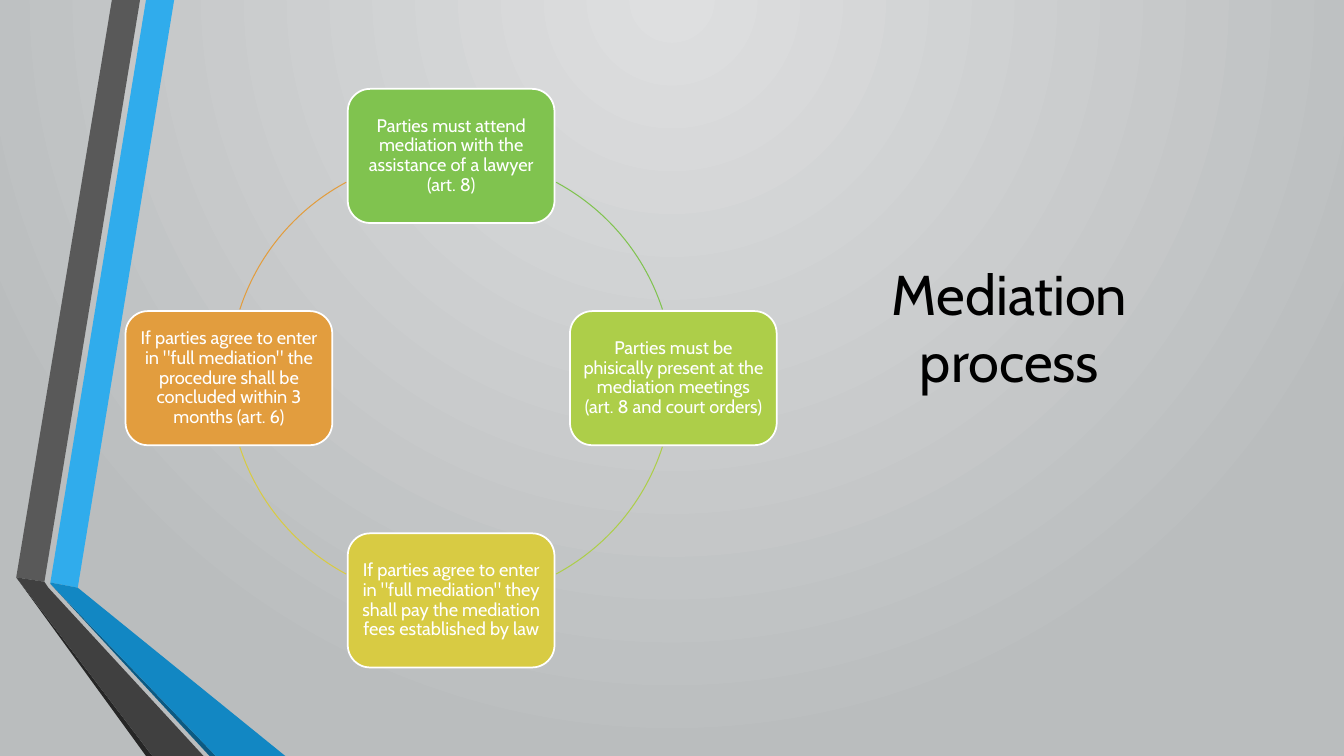
from math import cos, radians, sin

from lxml.etree import SubElement
from pptx import Presentation
from pptx.dml.color import RGBColor
from pptx.enum.shapes import MSO_SHAPE as SHAPE
from pptx.enum.text import MSO_ANCHOR as ANCHOR, MSO_AUTO_SIZE as AUTO, PP_ALIGN as ALIGN
from pptx.oxml.ns import qn
from pptx.util import Cm, Pt

FONT = "Cabin"
SLIDE_W, SLIDE_H = 33.87, 19.05
CENTRE_X, CENTRE_Y, RADIUS = 11.37, 9.53, 5.6
NODE_W, NODE_H = 5.21, 3.38
ARC_GAPS = [(28.2, 18), (18, 28.2), (28.2, 18), (18, 28.2)]

# Clockwise from the top of the cycle
STEPS = [
    ("Parties must attend mediation with the assistance of a lawyer (art. 8)", "80C34F"),
    ("Parties must be phisically present at the mediation meetings "
     "(art. 8 and court orders)", "ADCE49"),
    ('If parties agree to enter in "full mediation" they shall pay the mediation '
     "fees established by law", "D8CB43"),
    ('If parties agree to enter in "full mediation" the procedure shall be '
     "concluded within 3 months (art. 6)", "E29D3E"),
]

RIBBONS = [
    ("30ACEC", [(1.27, 14.68), (1.96, 14.81), (4.39, 0), (3.68, 0)]),
    ("595959", [(3.53, 0), (2.82, 0), (0.41, 14.55), (1.12, 14.66)]),
    ("262626", [(0.41, 14.55), (3.68, SLIDE_H), (3.84, SLIDE_H)]),
    ("0C5A82", [(1.27, 14.71), (5.28, SLIDE_H), (5.44, SLIDE_H)]),
    ("1287C3", [(1.27, 14.68), (1.27, 14.71), (5.44, SLIDE_H), (7.19, SLIDE_H),
                (1.96, 14.81)]),
    ("404040", [(0.41, 14.55), (3.84, SLIDE_H), (5.13, SLIDE_H), (1.22, 14.81),
                (1.12, 14.66)]),
]


def rgb(value):
    return RGBColor.from_string(value)


def set_attrs(obj, values):
    for name, value in values.items():
        setattr(obj, name, value)


def style(sp, fill=None, line=None, width=0):
    sp.shadow.inherit = False
    if fill:
        sp.fill.solid()
        sp.fill.fore_color.rgb = rgb(fill)
    else:
        sp.fill.background()
    if line:
        sp.line.color.rgb = rgb(line)
        sp.line.width = Pt(width)
    else:
        sp.line.fill.background()


def write(sp, text, size, color, frame, spacing=1.0):
    tf = sp.text_frame
    set_attrs(tf, {"word_wrap": True, "auto_size": AUTO.NONE, **frame})
    p = tf.paragraphs[0]
    set_attrs(p, {"alignment": ALIGN.CENTER, "line_spacing": spacing})
    r = p.add_run()
    r.text = text
    set_attrs(r.font, {"name": FONT, "size": Pt(size)})
    r.font.color.rgb = rgb(color)


def set_background(s, inner, outer):
    """Radial gradient spreading from the top centre."""
    fill = s.background.fill
    fill.gradient()
    for stop, color in zip(fill.gradient_stops, (inner, outer)):
        stop.color.rgb = rgb(color)
    grad = s.element.find(".//" + qn("a:gradFill"))
    grad.remove(grad.find(qn("a:lin")))
    circle = SubElement(grad, qn("a:path"), path="circle")
    SubElement(circle, qn("a:fillToRect"), l="43000", t="0", r="43000", b="100000")


def add_ribbon(s, color, points):
    corners = [(Cm(x), Cm(y)) for x, y in points]
    builder = s.shapes.build_freeform(*corners[0])
    builder.add_line_segments(corners[1:], close=True)
    style(builder.convert_to_shape(), color)


def add_title(s, text):
    title = s.shapes.title
    set_attrs(title, {"left": Cm(21.06), "top": Cm(6.4), "width": Cm(8.76), "height": Cm(10.41)})
    write(title, text, 40, "000000", {"vertical_anchor": ANCHOR.TOP})


def add_step(s, angle, text, color):
    x = CENTRE_X + RADIUS * cos(radians(angle)) - NODE_W / 2
    y = CENTRE_Y + RADIUS * sin(radians(angle)) - NODE_H / 2
    sp = s.shapes.add_shape(SHAPE.ROUNDED_RECTANGLE, Cm(x), Cm(y), Cm(NODE_W), Cm(NODE_H))
    style(sp, color, "FFFFFF", 1.25)
    margins = {f"margin_{side}": Cm(0.13) for side in ("left", "top", "right", "bottom")}
    write(sp, text, 13, "FFFFFF", {"vertical_anchor": ANCHOR.MIDDLE, **margins}, 0.9)


def add_arc(s, start, end, color):
    """Arc of the cycle, with angles in degrees clockwise from the right."""
    sp = s.shapes.add_shape(SHAPE.ARC, Cm(CENTRE_X - RADIUS), Cm(CENTRE_Y - RADIUS),
                            Cm(2 * RADIUS), Cm(2 * RADIUS))
    for i, angle in enumerate((start, end)):
        sp.adjustments[i] = angle * 0.6  # 60000 units a degree, scaled by 100000
    style(sp, line=color, width=0.75)


def main():
    prs = Presentation()
    set_attrs(prs, {"slide_width": Cm(SLIDE_W), "slide_height": Cm(SLIDE_H)})
    s = prs.slides.add_slide(prs.slide_layouts.get_by_name("Title Only"))
    set_background(s, "DEDFE0", "BABDBE")
    for color, points in RIBBONS:
        add_ribbon(s, color, points)
    add_title(s, "Mediation process")
    for i, ((text, color), (before, after)) in enumerate(zip(STEPS, ARC_GAPS)):
        angle = (270 + 90 * i) % 360
        add_step(s, angle, text, color)
        add_arc(s, angle + before, angle + 90 - after, color)
    prs.save("out.pptx")


if __name__ == "__main__":
    main()
